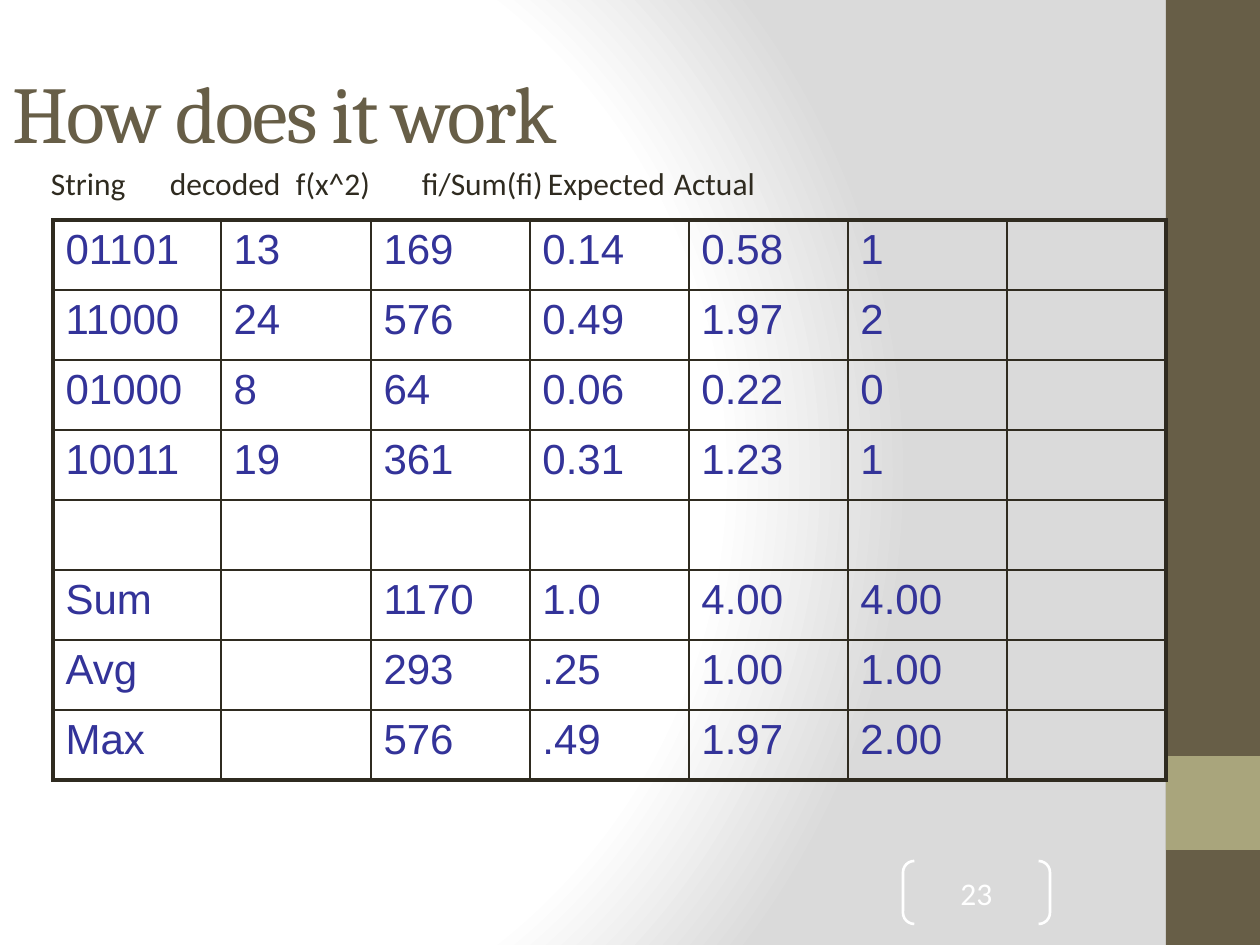
from dataclasses import dataclass

from lxml import etree
from pptx import Presentation
from pptx.dml.color import RGBColor
from pptx.enum.shapes import MSO_SHAPE as Shape
from pptx.enum.text import MSO_ANCHOR as Anchor, PP_ALIGN as Align
from pptx.oxml.ns import qn
from pptx.util import Pt

# Content
TITLE = "How does it work"
PAGE_NUMBER = "23"
HEADINGS = ["String", "decoded", "f(x^2)", "fi/Sum(fi)", "Expected", "Actual"]
ROWS = [
    ["01101", "13", "169", "0.14", "0.58", "1", ""],
    ["11000", "24", "576", "0.49", "1.97", "2", ""],
    ["01000", "8", "64", "0.06", "0.22", "0", ""],
    ["10011", "19", "361", "0.31", "1.23", "1", ""],
    [""] * 7,
    ["Sum", "", "1170", "1.0", "4.00", "4.00", ""],
    ["Avg", "", "293", ".25", "1.00", "1.00", ""],
    ["Max", "", "576", ".49", "1.97", "2.00", ""],
]

# Layout in px
SLIDE = (1260, 945)
BARS = [((1166, 0, 94, 945), "bar"), ((1166, 756, 94, 94), "accent")]
BRACKET_BOX = (903, 861, 147, 63)
TITLE_BOX = (0, 53, 1187, 116)
HEADING_BOX = (44, 158, 1132, 42)
HEADING_STARTS = [51, 267, 456, 657, 842, 1023]
TABLE_LEFT, TABLE_TOP, ROW_HEIGHT = 53, 220, 70
COLUMN_WIDTHS = [168, 150] + [159] * 5


@dataclass(frozen=True)
class Theme:
    bar: str = "675E47"
    accent: str = "A9A57C"
    light: str = "FFFFFF"
    shade: str = "DADADA"
    ink: str = "2F2B20"
    value: str = "333399"
    title_font: str = "Cambria"
    body_font: str = "Calibri"
    table_font: str = "Arial"
    title_size: int = 46
    body_size: int = 18
    table_size: int = 24
    inner_line: float = 1
    outer_line: float = 2.25
    bracket_line: float = 1.5


THEME = Theme()


def px(length):
    return round(length * 914400 / 126)


def place(box):
    return [px(length) for length in box]


def add_run(paragraph, text, font, size, color):
    run = paragraph.add_run()
    run.text = text
    run.font.name = font
    run.font.size = Pt(size)
    run.font.color.rgb = RGBColor.from_string(color)
    return run


def add_child(parent, tag, **attributes):
    return etree.SubElement(parent, qn(tag), attributes)


def paint_background(slide):
    fill = slide.background.fill
    fill.gradient()
    gradient = slide.background._cSld.find(".//" + qn("a:gradFill"))
    for child in list(gradient):
        gradient.remove(child)
    stops = add_child(gradient, "a:gsLst")
    for position, color in [(0, THEME.light), (75, THEME.light), (100, THEME.shade)]:
        stop = add_child(stops, "a:gs", pos=str(position * 1000))
        add_child(stop, "a:srgbClr", val=color)
    circle = add_child(gradient, "a:path", path="circle")
    add_child(circle, "a:fillToRect", l="20000", t="50000", r="100000", b="50000")


def add_bars(slide):
    for box, color in BARS:
        bar = slide.shapes.add_shape(Shape.RECTANGLE, *place(box))
        bar.shadow.inherit = False
        bar.fill.solid()
        bar.fill.fore_color.rgb = RGBColor.from_string(getattr(THEME, color))
        bar.line.fill.background()


def clear_margins(frame):
    frame.margin_left = frame.margin_right = 0
    frame.margin_top = frame.margin_bottom = 0


def add_page_number(slide):
    bracket = slide.shapes.add_shape(Shape.DOUBLE_BRACKET, *place(BRACKET_BOX))
    bracket.adjustments[0] = 0.18
    bracket.shadow.inherit = False
    bracket.fill.background()
    bracket.line.color.rgb = RGBColor.from_string(THEME.light)
    bracket.line.width = Pt(THEME.bracket_line)
    frame = bracket.text_frame
    clear_margins(frame)
    frame.vertical_anchor = Anchor.MIDDLE
    paragraph = frame.paragraphs[0]
    paragraph.alignment = Align.CENTER
    add_run(paragraph, PAGE_NUMBER, THEME.body_font, THEME.body_size, THEME.light)


def set_title(slide):
    title = slide.shapes.title
    title.left, title.top, title.width, title.height = place(TITLE_BOX)
    frame = title.text_frame
    frame.vertical_anchor = Anchor.MIDDLE
    paragraph = frame.paragraphs[0]
    paragraph.alignment = Align.LEFT
    run = add_run(paragraph, TITLE, THEME.title_font, THEME.title_size, THEME.bar)
    run.font._element.set("spc", "-100")
    slide.shapes._spTree.append(title._element)  # in front of the bars


def set_border(cell, side, width):
    line = add_child(cell._tc.get_or_add_tcPr(), f"a:ln{side}", w=str(Pt(width)))
    add_child(add_child(line, "a:solidFill"), "a:srgbClr", val=THEME.ink)


def add_value_table(slide):
    row_count, column_count = len(ROWS), len(COLUMN_WIDTHS)
    box = (TABLE_LEFT, TABLE_TOP, sum(COLUMN_WIDTHS), ROW_HEIGHT * row_count)
    table = slide.shapes.add_table(row_count, column_count, *place(box)).table
    table.first_row = table.horz_banding = False
    for column, width in zip(table.columns, COLUMN_WIDTHS):
        column.width = px(width)
    for r, values in enumerate(ROWS):
        table.rows[r].height = px(ROW_HEIGHT)
        for c, value in enumerate(values):
            cell = table.cell(r, c)
            outer = {"L": c == 0, "R": c == column_count - 1,
                     "T": r == 0, "B": r == row_count - 1}
            for side, is_outer in outer.items():
                set_border(cell, side, THEME.outer_line if is_outer else THEME.inner_line)
            cell.fill.background()
            if value:
                add_run(cell.text_frame.paragraphs[0], value,
                        THEME.table_font, THEME.table_size, THEME.value)


def add_headings(slide):
    frame = slide.shapes.add_textbox(*place(HEADING_BOX)).text_frame
    frame.word_wrap = True
    frame.margin_left = frame.margin_right = 0
    paragraph = frame.paragraphs[0]
    # The first heading is indented, the others sit on tab stops
    first, *others = [start - HEADING_BOX[0] for start in HEADING_STARTS]
    properties = paragraph._p.get_or_add_pPr()
    properties.set("marL", "0")
    properties.set("indent", str(px(first)))
    tabs = add_child(properties, "a:tabLst")
    for position in others:
        add_child(tabs, "a:tab", pos=str(px(position)), algn="l")
    add_run(paragraph, "\t".join(HEADINGS), THEME.body_font, THEME.body_size, THEME.ink)


def main():
    presentation = Presentation()
    presentation.slide_width, presentation.slide_height = place(SLIDE)
    slide = presentation.slides.add_slide(presentation.slide_layouts[5])
    paint_background(slide)
    add_bars(slide)
    add_page_number(slide)
    set_title(slide)
    add_value_table(slide)
    add_headings(slide)
    presentation.save("out.pptx")


if __name__ == "__main__":
    main()
